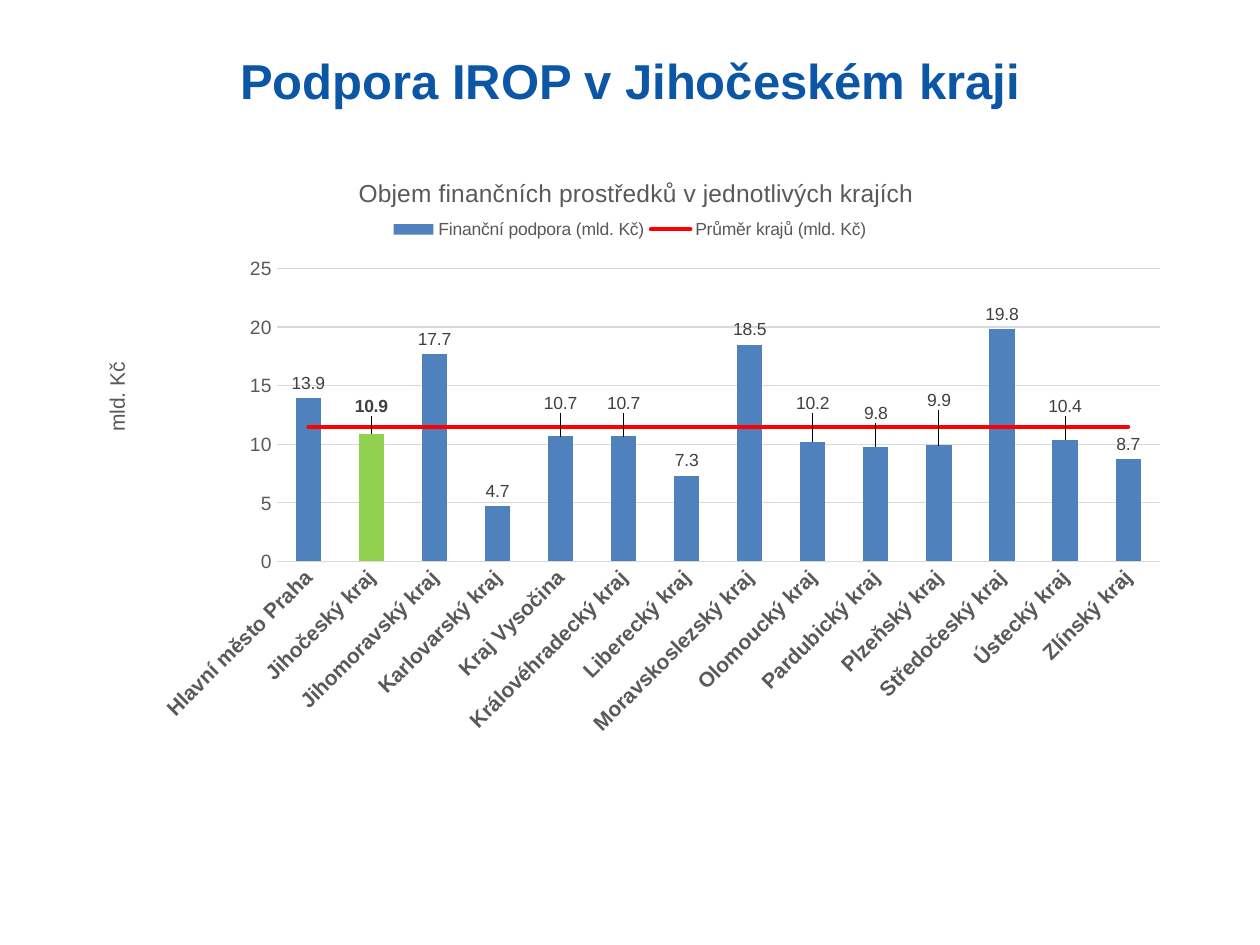
"""Build the slide on regional IROP funding with a combined column and line chart."""
from lxml import etree
from pptx import Presentation
from pptx.chart.data import CategoryChartData
from pptx.dml.color import RGBColor
from pptx.enum import chart as kinds, text
from pptx.oxml import ns, xmlchemy
from pptx.util import Inches, Pt

FONT = "Arial"
TITLE_BLUE = RGBColor(0x0C, 0x56, 0xA6)
BAR_BLUE = RGBColor(0x4F, 0x81, 0xBD)
GREEN = RGBColor(0x92, 0xD0, 0x50)
RED = RGBColor(0xFF, 0, 0)
GREY = RGBColor(0x59, 0x59, 0x59)
LABEL_GREY = RGBColor(0x40, 0x40, 0x40)
RULE_GREY = RGBColor(0xD9, 0xD9, 0xD9)

HEADING = "Podpora IROP v Jihočeském kraji"
CHART_TITLE = "Objem finančních prostředků v jednotlivých krajích"
AXIS_TITLE = "mld. Kč"
SUPPORT, AVERAGE = "Finanční podpora (mld. Kč)", "Průměr krajů (mld. Kč)"
AVERAGE_VALUE = 11.5
HIGHLIGHT = 1
REGIONS = {
    "Hlavní město Praha": 13.9, "Jihočeský kraj": 10.9,
    "Jihomoravský kraj": 17.7, "Karlovarský kraj": 4.7,
    "Kraj Vysočina": 10.7, "Královéhradecký kraj": 10.7,
    "Liberecký kraj": 7.3, "Moravskoslezský kraj": 18.5,
    "Olomoucký kraj": 10.2, "Pardubický kraj": 9.8,
    "Plzeňský kraj": 9.9, "Středočeský kraj": 19.8,
    "Ústecký kraj": 10.4, "Zlínský kraj": 8.7,
}
LABEL_LIFTS = {1: 0.02, 4: 0.03, 5: 0.03, 8: 0.04, 9: 0.03, 10: 0.05, 12: 0.03}


def add(parent, name, **attributes):
    return etree.SubElement(parent, ns.qn(name), attributes)


def place(element, index, **settings):
    for old in element.findall(ns.qn("c:layout")):
        element.remove(old)
    layout = xmlchemy.OxmlElement("c:layout")
    manual = add(layout, "c:manualLayout")
    for name, value in settings.items():
        add(manual, f"c:{name}", val=str(value))
    element.insert(index, layout)


def style(font, size, color, bold=False):
    font.name, font.size, font.bold = FONT, Pt(size), bold
    font.color.rgb = color


def set_title(owner, words, size, x, y):
    title = owner.chart_title if hasattr(owner, "chart_title") else owner.axis_title
    para = title.text_frame.paragraphs[0]
    para.text = words
    style(para.font, size, GREY)
    place(title._element, 1, xMode="edge", yMode="edge", x=x, y=y)
    return title


def move_to_line(chart):
    bars = chart.plots[0]._element
    series = bars.findall(ns.qn("c:ser"))[1]
    for flag in series.findall(ns.qn("c:invertIfNegative")):
        series.remove(flag)
    lines = xmlchemy.OxmlElement("c:lineChart")
    add(lines, "c:grouping", val="standard")
    add(lines, "c:varyColors", val="0")
    lines.append(series)
    add(lines, "c:marker", val="1")
    for axis in bars.findall(ns.qn("c:axId")):
        add(lines, "c:axId", val=str(axis.get("val")))
    bars.addnext(lines)


def style_series(chart):
    columns, lines = chart.plots
    columns.gap_width, columns.vary_by_categories = 150, False
    support, average = columns.series[0], lines.series[0]
    support.format.fill.solid()
    support.format.fill.fore_color.rgb = BAR_BLUE
    fill = support.points[HIGHLIGHT].format.fill
    fill.solid()
    fill.fore_color.rgb = GREEN
    labels = support.data_labels
    labels.show_value = True
    labels.number_format, labels.number_format_is_linked = "0.0", False
    labels.position = kinds.XL_LABEL_POSITION.OUTSIDE_END
    style(labels.font, 10, LABEL_GREY)
    for index, lift in LABEL_LIFTS.items():
        label = support.points[index].data_label
        style(label.font, 10, LABEL_GREY, index == HIGHLIGHT)
        label.position = kinds.XL_LABEL_POSITION.OUTSIDE_END
        place(label._get_or_add_dLbl(), 1, x=0, y=-lift)
    average.smooth = False
    average.marker.style = kinds.XL_MARKER_STYLE.NONE
    average.format.line.color.rgb = RED
    average.format.line.width = Pt(2.25)
    average.format.line._get_or_add_ln().set("cap", "rnd")


def style_axes(chart):
    regions, amounts = chart.category_axis, chart.value_axis
    for axis in (regions, amounts):
        axis.major_tick_mark = axis.minor_tick_mark = kinds.XL_TICK_MARK.NONE
    style(regions.tick_labels.font, 12, GREY, True)
    regions._element.find(ns.qn("c:txPr")).find(ns.qn("a:bodyPr")).set("rot", "-2700000")
    style(amounts.tick_labels.font, 11, GREY)
    amounts.tick_labels.number_format = "0"
    amounts.tick_labels.number_format_is_linked = False
    amounts.minimum_scale, amounts.maximum_scale, amounts.major_unit = 0, 25, 5
    amounts.format.line.fill.background()
    for line in (regions.format.line, amounts.major_gridlines.format.line):
        line.color.rgb, line.width = RULE_GREY, Pt(0.75)
    title = set_title(amounts, AXIS_TITLE, 12, 0.02, 0.35)
    body = title.text_frame._txBody.find(ns.qn("a:bodyPr"))
    body.set("rot", "-5400000")
    body.set("vert", "horz")


def add_region_chart(page):
    data = CategoryChartData(number_format="0.0")
    data.categories = list(REGIONS)
    data.add_series(SUPPORT, list(REGIONS.values()))
    data.add_series(AVERAGE, [AVERAGE_VALUE] * len(REGIONS))
    chart = page.shapes.add_chart(
        kinds.XL_CHART_TYPE.COLUMN_CLUSTERED,
        Inches(0.62), Inches(1.18), Inches(8.76), Inches(4.75), data).chart
    chart.font.name, chart.font.size = FONT, Pt(10)
    move_to_line(chart)
    style_series(chart)
    style_axes(chart)
    set_title(chart, CHART_TITLE, 14, 0.25, 0.04)
    chart.has_legend = True
    chart.legend.position = kinds.XL_LEGEND_POSITION.TOP
    chart.legend.include_in_layout = False
    style(chart.legend.font, 10, GREY)
    place(chart._chartSpace.chart.plotArea, 0, layoutTarget="inner",
          xMode="edge", yMode="edge", x=0.18, y=0.2, w=0.8, h=0.49)
    place(chart.legend._element, 1, xMode="edge", yMode="edge",
          x=0.28, y=0.11, w=0.44, h=0.05)


def add_heading(page):
    box = page.shapes.add_textbox(Inches(0.85), Inches(0.35), Inches(8.3), Inches(1.32))
    box.text_frame.word_wrap = True
    para = box.text_frame.paragraphs[0]
    para.text, para.alignment = HEADING, text.PP_ALIGN.CENTER
    style(para.font, 28, TITLE_BLUE, True)


def main():
    deck = Presentation()
    deck.slide_width, deck.slide_height = Inches(10), Inches(7.5)
    page = deck.slides.add_slide(deck.slide_layouts[6])
    add_heading(page)
    add_region_chart(page)
    deck.save("out.pptx")


if __name__ == "__main__":
    main()
